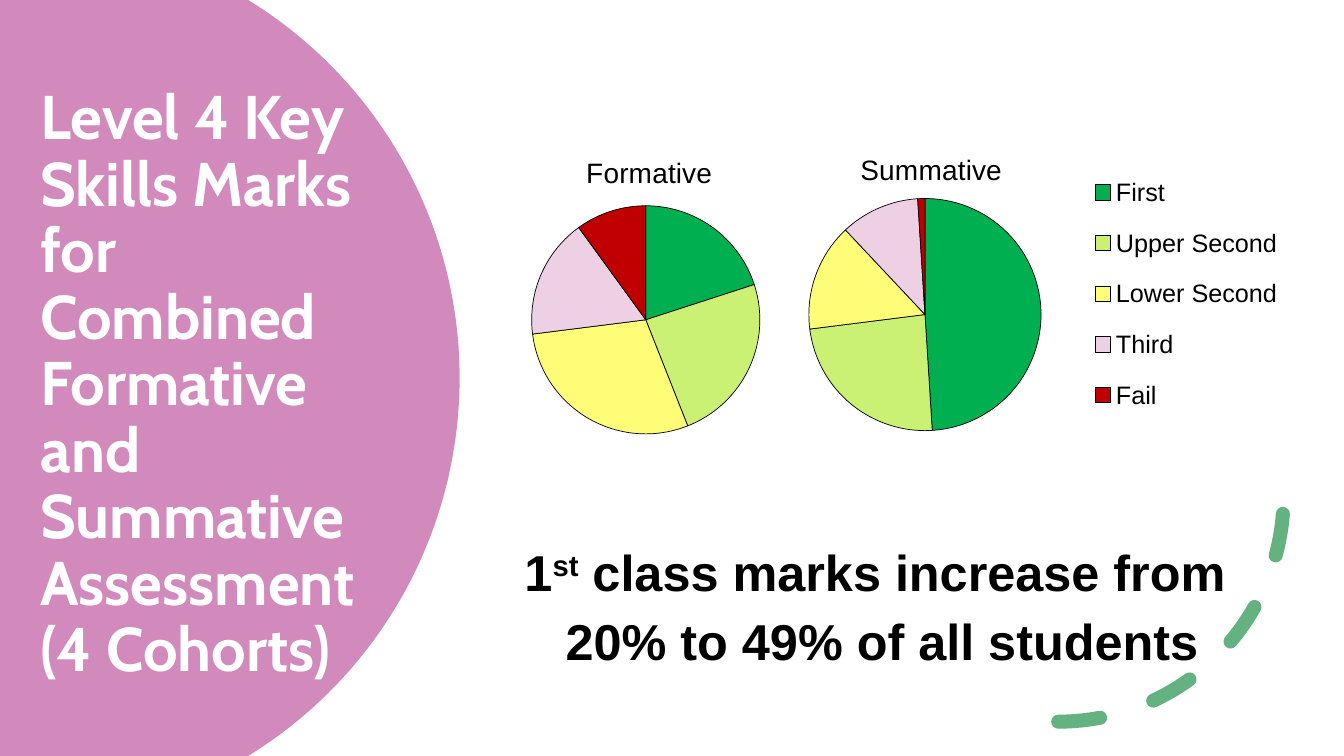
import dataclasses
import math
import pptx
import pptx.chart.data
import pptx.dml.color
import pptx.enum.chart
import pptx.enum.dml
import pptx.enum.shapes
import pptx.enum.text
import pptx.oxml.ns
import pptx.util
from lxml import etree

qn = pptx.oxml.ns.qn
ALIGN = pptx.enum.text.PP_ALIGN


@dataclasses.dataclass(frozen=True)
class Theme:
    panel: str = "D28ABC"
    accent: str = "64B27F"
    light: str = "FFFFFF"
    dark: str = "000000"
    grades: tuple = ("00B050", "CAF074", "FFFD78", "EDD0E4", "C00000")
    title_font: str = "Cabin"
    body_font: str = "Arial"
    title_size: int = 44
    body_size: int = 36
    chart_title_size: int = 20
    legend_size: int = 18


THEME = Theme()
GRADES = ("First", "Upper Second", "Lower Second", "Third", "Fail")


@dataclasses.dataclass(frozen=True)
class Box:
    x: int
    y: int
    w: int
    h: int

    def inner(self, x, y, w, h):
        """Inner box, given in percent of this one."""
        return Box(int(self.x + self.w * x / 100), int(self.y + self.h * y / 100),
                   int(self.w * w / 100), int(self.h * h / 100))


def rgb(value):
    return pptx.dml.color.RGBColor.from_string(value)


def style(font, name, size, color, bold=False):
    font.name, font.size, font.bold = name, pptx.util.Pt(size), bold
    font.color.rgb = rgb(color)


def prepare(sp, box):
    """Put a placeholder in its box and return its text frame."""
    sp.left, sp.top, sp.width, sp.height = box.x, box.y, box.w, box.h
    tf = sp.text_frame
    tf.word_wrap = True
    tf.auto_size = pptx.enum.text.MSO_AUTO_SIZE.NONE
    tf.vertical_anchor = pptx.enum.text.MSO_ANCHOR.MIDDLE
    return tf


# Coloured panel: its right edge is a circular arc
def add_panel(slide, box, bulge_share=0.46):
    half = box.h / 2
    bulge = box.w * bulge_share
    radius = (bulge ** 2 + half ** 2) / (2 * bulge)
    cx, cy = box.x + box.w - radius, box.y + half
    sweep = math.asin(half / radius)
    steps = 90
    angles = [sweep * (2 * i / steps - 1) for i in range(steps + 1)]
    arc = [(cx + radius * math.cos(a), cy + radius * math.sin(a)) for a in angles]
    fb = slide.shapes.build_freeform(box.x, box.y)
    fb.add_line_segments(arc + [(box.x, box.y + box.h)], close=True)
    sp = fb.convert_to_shape()
    sp.shadow.inherit = False
    sp.fill.solid()
    sp.fill.fore_color.rgb = rgb(THEME.panel)
    sp.line.fill.background()
    # Send behind the placeholders
    slide.shapes._spTree.insert(2, sp._element)


def add_title(slide, box):
    tf = prepare(slide.shapes.title, box)
    p = tf.paragraphs[0]
    p.alignment, p.line_spacing = ALIGN.LEFT, 0.9
    lines = ("Level 4 Key Skills Marks for Combined Formative ",
             "and Summative Assessment ", "(4 Cohorts)")
    for i, text in enumerate(lines):
        if i:
            p.add_line_break()
        r = p.add_run()
        r.text = text
        style(r.font, THEME.title_font, THEME.title_size, THEME.light, True)


def add_message(slide, box):
    tf = prepare(slide.placeholders[1], box)
    rows = ((("1", 0), ("st", 30000), (" class marks increase from ", 0)),
            (("20% to 49% of all students", 0),))
    for i, runs in enumerate(rows):
        p = tf.add_paragraph() if i else tf.paragraphs[0]
        p.alignment, p.line_spacing = ALIGN.CENTER, 0.9
        p.space_before = pptx.util.Pt(10)
        pPr = p._p.get_or_add_pPr()
        pPr.set("marL", "0")
        pPr.set("indent", "0")
        etree.SubElement(pPr, qn("a:buNone"))
        for text, baseline in runs:
            r = p.add_run()
            r.text = text
            style(r.font, THEME.body_font, THEME.body_size, THEME.dark, True)
            if baseline:
                r.font._element.set("baseline", str(baseline))


# Dashed quarter circle with round ends
def add_dashed_arc(slide, box):
    sp = slide.shapes.add_shape(pptx.enum.shapes.MSO_SHAPE.ARC, box.x, box.y, box.w, box.h)
    sp.shadow.inherit = False
    sp.fill.background()
    sp.line.color.rgb = rgb(THEME.accent)
    sp.line.width = pptx.util.Pt(10)
    sp.line.dash_style = pptx.enum.dml.MSO_LINE.DASH
    spPr = sp._element.spPr
    spPr.find(qn("a:ln")).set("cap", "rnd")
    spPr.find(qn("a:xfrm")).set("flipV", "1")


def set_layout(chart, tag, index, inner=False, **shares):
    """Fix the place of a chart element, in shares of the chart."""
    parent = chart._chartSpace.find(".//" + qn(tag))
    for old in parent.findall(qn("c:layout")):
        parent.remove(old)
    layout = etree.SubElement(parent, qn("c:layout"))
    manual = etree.SubElement(layout, qn("c:manualLayout"))
    items = [("layoutTarget", "inner")] if inner else []
    items += [("xMode", "edge"), ("yMode", "edge")] + list(shares.items())
    for name, value in items:
        etree.SubElement(manual, qn("c:" + name)).set("val", str(value))
    parent.insert(index, layout)


def add_pie(slide, box, name, values, title_at, pie_at, legend_at=None):
    data = pptx.chart.data.CategoryChartData()
    data.categories = GRADES
    data.add_series("Series 1", values)
    chart = slide.shapes.add_chart(pptx.enum.chart.XL_CHART_TYPE.PIE,
                                   box.x, box.y, box.w, box.h, data).chart
    style(chart.font, THEME.body_font, THEME.legend_size, THEME.dark)
    plot = chart.plots[0]
    plot.vary_by_categories = True
    for i, color in enumerate(THEME.grades):
        fmt = plot.series[0].points[i].format
        fmt.fill.solid()
        fmt.fill.fore_color.rgb = rgb(color)
        fmt.line.color.rgb = rgb(THEME.dark)
        fmt.line.width = pptx.util.Pt(0.5)

    chart.has_title = True
    r = chart.chart_title.text_frame.paragraphs[0].add_run()
    r.text = name
    style(r.font, THEME.body_font, THEME.chart_title_size, THEME.dark)
    set_layout(chart, "c:title", 1, **title_at)
    set_layout(chart, "c:plotArea", 0, True, **pie_at)

    chart.has_legend = legend_at is not None
    if legend_at:
        chart.legend.position = pptx.enum.chart.XL_LEGEND_POSITION.RIGHT
        chart.legend.include_in_layout = False
        style(chart.legend.font, THEME.body_font, THEME.legend_size, THEME.dark)
        set_layout(chart, "c:legend", 1, **legend_at)


def build_results_slide(prs):
    slide = prs.slides.add_slide(prs.slide_layouts[1])
    page = Box(0, 0, prs.slide_width, prs.slide_height)
    add_panel(slide, page.inner(0, 0, 34.2, 100))
    add_title(slide, page.inner(2.25, 9.2, 28.4, 83.7))
    add_message(slide, page.inner(33.08, 70, 65.12, 21.3))
    add_dashed_arc(slide, page.inner(61.97, 35.87, 33.53, 59.6))
    add_pie(slide, page.inner(55, 16.4, 43.2, 42.4), "Summative", (49, 24, 15, 11, 1),
            dict(x=0.2, y=0.07), dict(x=0.12, y=0.23, w=0.4, h=0.73),
            dict(x=0.6, y=0.1, w=0.34, h=0.86))
    add_pie(slide, page.inner(33.9, 17.33, 28.3, 42), "Formative", (20, 24, 29, 17, 10),
            dict(x=0.33, y=0.06), dict(x=0.2, y=0.23, w=0.6, h=0.73))


def main():
    prs = pptx.Presentation()
    prs.slide_width = pptx.util.Inches(13.33)
    prs.slide_height = pptx.util.Inches(7.5)
    build_results_slide(prs)
    prs.save("out.pptx")


if __name__ == "__main__":
    main()
